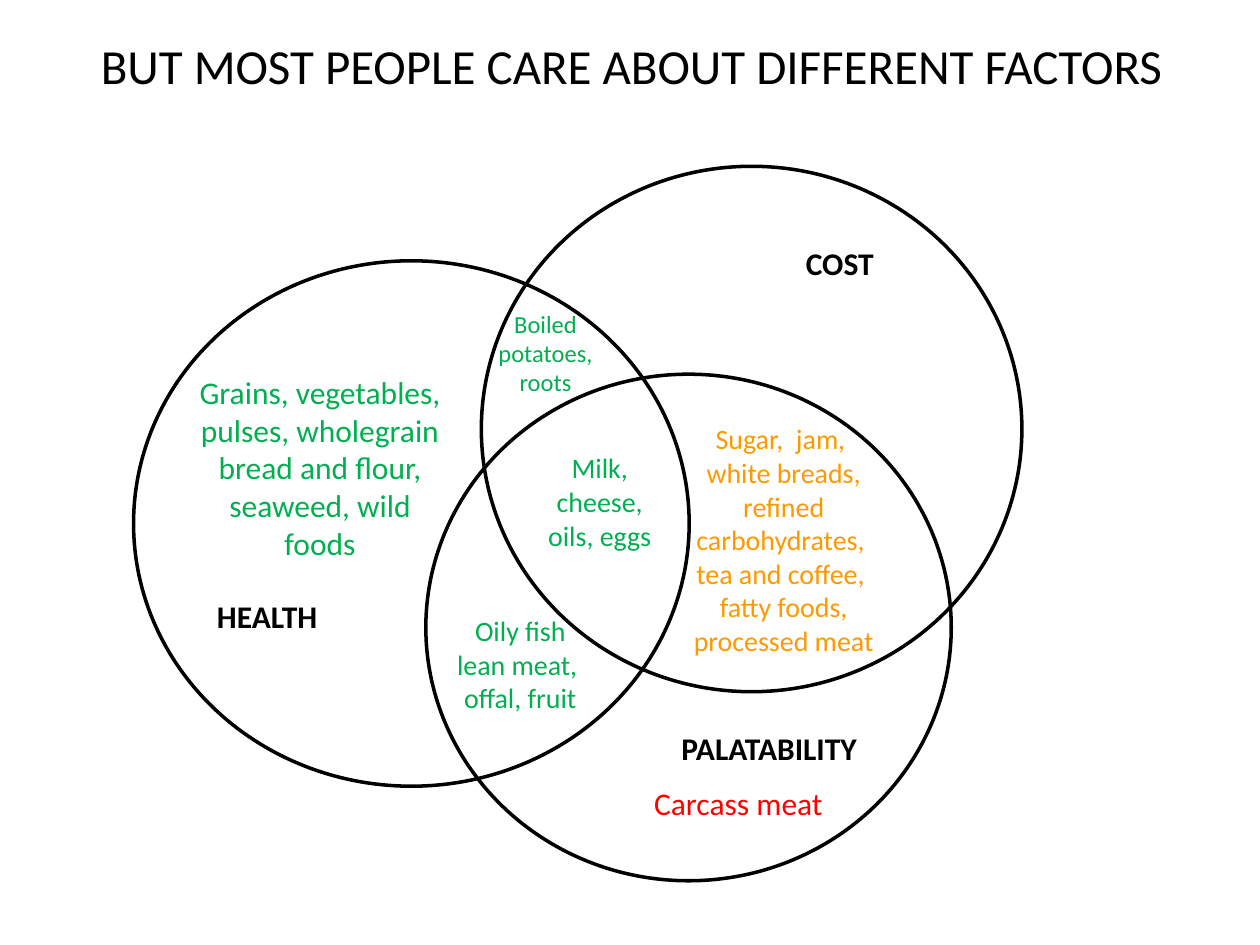
"""Build a Venn diagram slide of foods by health, cost and palatability."""
from pptx import Presentation
from pptx import util as u
from pptx.dml.color import RGBColor
from pptx.enum import shapes, text

COLORS = {"black": "000000", "good": "00B050", "fair": "FF9900", "poor": "FF0000"}
WIDTH, HEIGHT = 10, 7.5

CIRCLES = [
    (10.6, 27.6, 44.1, 55.6),
    (33.8, 39.6, 41.7, 53.6),
    (38.2, 17.6, 42.9, 55.6),
]
FACTORS = [
    ("HEALTH", (14.1, 62.53, 14.2, 5.33)),
    ("PALATABILITY", (52.4, 76.53, 17.3, 5.33)),
    ("COST", (58.8, 25.2, 15.7, 5.33)),
]
FOODS = [
    ("Oily fish\nlean meat, \noffal, fruit", (32.8, 64.27, 17, 12.13), 16, "good"),
    ("Sugar,  jam, \nwhite breads, refined carbohydrates, \ntea and coffee, \n"
     "fatty foods, processed meat", (52, 44, 20.4, 26.53), 16, "fair"),
    ("Carcass meat", (47.6, 82.27, 22, 5.33), 18, "poor"),
    ("Grains, vegetables, pulses, wholegrain bread and flour, seaweed, wild foods",
     (14.4, 38.8, 22, 21.6), 18, "good"),
    ("Boiled potatoes, roots", (37.3, 32, 12, 10.8), 14, "good"),
    ("Milk, cheese, oils, eggs", (41.6, 47.07, 12, 12.13), 16, "good"),
]


def place(left, top, width, height):
    """Turn percentages of the slide's size into lengths."""
    return (u.Inches(left * WIDTH / 100), u.Inches(top * HEIGHT / 100),
            u.Inches(width * WIDTH / 100), u.Inches(height * HEIGHT / 100))


def write(sp, content, size=18, color="black", bold=False,
          anchor=text.MSO_ANCHOR.TOP, fit=text.MSO_AUTO_SIZE.SHAPE_TO_FIT_TEXT):
    """Write centred paragraphs, one for each line of the content."""
    tf = sp.text_frame
    tf.word_wrap = True
    tf.auto_size = fit
    tf.vertical_anchor = anchor
    tf.text = content
    for p in tf.paragraphs:
        p.alignment = text.PP_ALIGN.CENTER
        for r in p.runs:
            r.font.name = "Calibri"
            r.font.size = u.Pt(size)
            r.font.bold = bold
            r.font.color.rgb = RGBColor.from_string(COLORS[color])


def add_title(s, content):
    """Move and format the title placeholder."""
    sp = s.shapes.title
    sp.left, sp.top, sp.width, sp.height = place(5.1, -1.47, 90, 16.67)
    write(sp, content, size=28, anchor=text.MSO_ANCHOR.MIDDLE,
          fit=text.MSO_AUTO_SIZE.NONE)


def add_circle(s, box):
    """Draw one outlined set of the diagram."""
    sp = s.shapes.add_shape(shapes.MSO_SHAPE.OVAL, *place(*box))
    sp.shadow.inherit = False
    sp.fill.background()
    sp.line.color.rgb = RGBColor.from_string(COLORS["black"])
    sp.line.width = u.Pt(2)


def add_label(s, content, box, **fmt):
    """Add a text box with formatted text."""
    write(s.shapes.add_textbox(*place(*box)), content, **fmt)


def main():
    """Build and save the slide."""
    prs = Presentation()
    prs.slide_width, prs.slide_height = u.Inches(WIDTH), u.Inches(HEIGHT)
    s = prs.slides.add_slide(prs.slide_layouts[5])
    add_title(s, "BUT MOST PEOPLE CARE ABOUT DIFFERENT FACTORS")
    for box in CIRCLES:
        add_circle(s, box)
    for content, box in FACTORS:
        add_label(s, content, box, bold=True)
    for content, box, size, color in FOODS:
        add_label(s, content, box, size=size, color=color)
    prs.save("out.pptx")


if __name__ == "__main__":
    main()
